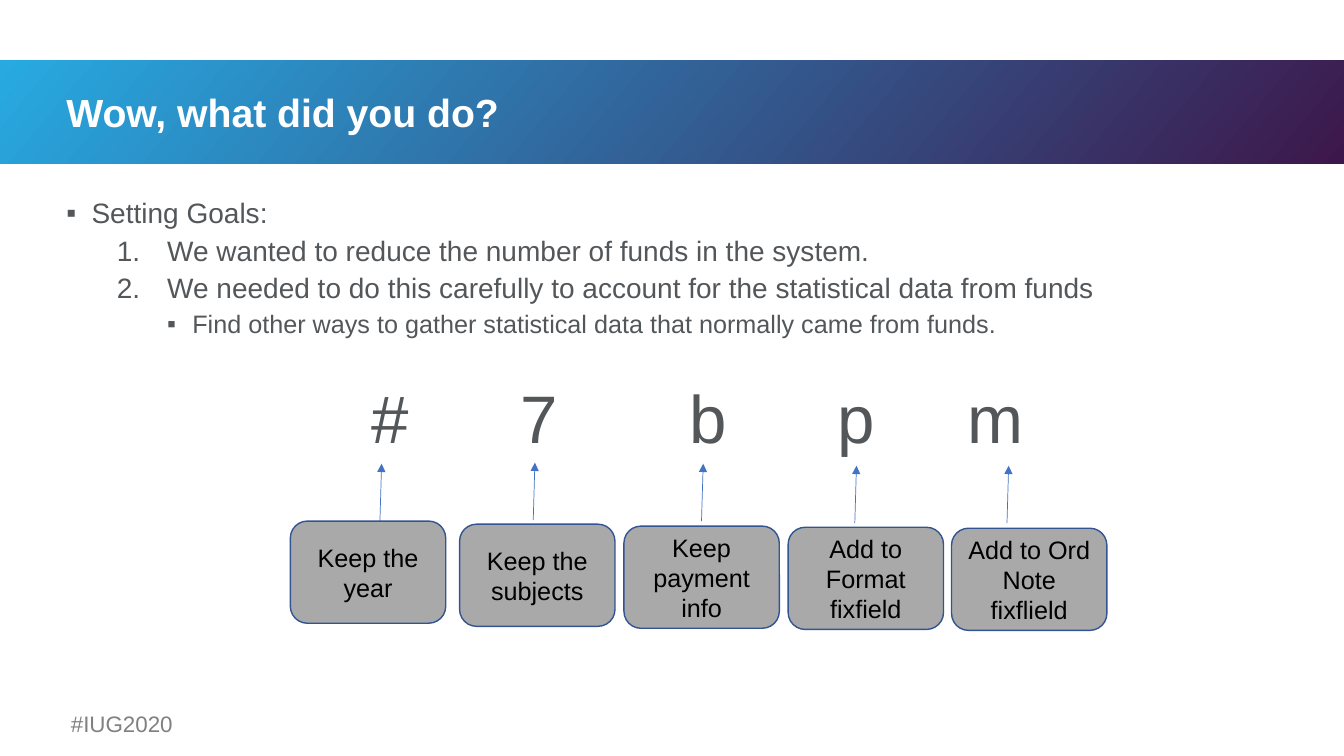
from lxml import etree
from pptx import Presentation
from pptx.dml.color import RGBColor
from pptx.enum.shapes import MSO_CONNECTOR, MSO_SHAPE
from pptx.enum.text import MSO_ANCHOR, PP_ALIGN
from pptx.oxml.ns import qn
from pptx.util import Pt

STRAIGHT = MSO_CONNECTOR.STRAIGHT
RECTANGLE, ROUNDED = MSO_SHAPE.RECTANGLE, MSO_SHAPE.ROUNDED_RECTANGLE
TOP, MIDDLE = MSO_ANCHOR.TOP, MSO_ANCHOR.MIDDLE
LEFT, CENTER = PP_ALIGN.LEFT, PP_ALIGN.CENTER

TITLE = "Wow, what did you do?"
HASHTAG = "#IUG2020"
SQUARE, NUMBER = ("buChar", "char", "▪"), ("buAutoNum", "type", "arabicPeriod")
GOALS = [
    ("Setting Goals:", 0, 18, 18, 20, SQUARE),
    ("We wanted to reduce the number of funds in the system.", 1, 72, 36, 20, NUMBER),
    ("We needed to do this carefully to account for the statistical data from funds",
     1, 72, 36, 20, NUMBER),
    ("Find other ways to gather statistical data that normally came from funds.",
     2, 90, 18, 18, SQUARE),
]
CODES = [
    ("#", 278.6, "Keep the year", 207.4, 372.2, 271.4, 372.2),
    ("7", 385, "Keep the subjects", 328.3, 374.4, 380.9, 371.5),
    ("b", 505.7, "Keep payment info", 445.7, 375.8, 501.1, 372.2),
    ("p", 611.4, "Add to Format fixfield", 563, 376.6, 610.6, 373.7),
    ("m", 711.4, "Add to Ord Note fixflield", 679.7, 377.3, 719.3, 373.7),
]
CARD_W, CARD_H = 111, 73
LETTER_W, LETTER_TOP, LETTER_H = 72, 268.7, 56
ARROW_RISE, ARROW_LEAN = 41, 1.2
SLATE = "53575A"


def color(value):
    return RGBColor.from_string(value)


def write(paragraph, text, size, ink, bold=False, align=LEFT, spacing=1.0, before=0):
    paragraph.alignment = align
    paragraph.line_spacing = spacing
    paragraph.space_before = Pt(before)
    run = paragraph.add_run()
    run.text = text
    run.font.name = "Arial"
    run.font.size = Pt(size)
    run.font.bold = bold
    run.font.color.rgb = color(ink)


def add_frame(left, top, width, height, anchor=TOP):
    box = slide.shapes.add_textbox(Pt(left), Pt(top), Pt(width), Pt(height))
    frame = box.text_frame
    frame.word_wrap = True
    frame.vertical_anchor = anchor
    return frame


def add_bullet(paragraph, level, margin, hanging, bullet):
    tag, key, value = bullet
    paragraph.level = level
    properties = paragraph._p.get_or_add_pPr()
    properties.set("marL", str(Pt(margin)))
    properties.set("indent", str(-Pt(hanging)))
    etree.SubElement(properties, qn("a:buFont")).set("typeface", "Arial")
    etree.SubElement(properties, qn("a:" + tag)).set(key, value)


def add_arrow(x, bottom):
    arrow = slide.shapes.add_connector(
        STRAIGHT, Pt(x), Pt(bottom), Pt(x + ARROW_LEAN), Pt(bottom - ARROW_RISE))
    arrow.line.color.rgb = color("4472C4")
    arrow.line.width = Pt(0.5)
    etree.SubElement(arrow.line._get_or_add_ln(), qn("a:tailEnd")).set("type", "triangle")
    etree.SubElement(arrow._element.spPr, qn("a:effectLst"))


def add_card(text, left, top):
    card = slide.shapes.add_shape(ROUNDED, Pt(left), Pt(top), Pt(CARD_W), Pt(CARD_H))
    card.shadow.inherit = False
    card.fill.solid()
    card.fill.fore_color.rgb = color("A9A9A9")
    card.line.color.rgb = color("325491")
    card.line.width = Pt(1)
    card.text_frame.word_wrap = True
    card.text_frame.vertical_anchor = MIDDLE
    write(card.text_frame.paragraphs[0], text, 18, "000000", align=CENTER)


deck = Presentation()
deck.slide_width, deck.slide_height = Pt(960), Pt(540)
slide = deck.slides.add_slide(deck.slide_layouts[6])

hashtag = add_frame(17, 504, 140, 26.6)
write(hashtag.paragraphs[0], HASHTAG, 16, "808080", align=CENTER)

banner = slide.shapes.add_shape(RECTANGLE, 0, Pt(43), Pt(960), Pt(74))
banner.shadow.inherit = False
banner.line.fill.background()
banner.fill.gradient()
banner.fill.gradient_angle = 320
for stop, shade in zip(banner.fill.gradient_stops, ("27AAE1", "3D174B")):
    stop.color.rgb = color(shade)

title = add_frame(40.3, 53.3, 872.6, 57.6, MIDDLE)
write(title.paragraphs[0], TITLE, 28, "FFFFFF", bold=True, spacing=0.9)

goals = add_frame(40.3, 139, 872.6, 115)
for index, (text, level, margin, hanging, size, bullet) in enumerate(GOALS):
    goal = goals.add_paragraph() if index else goals.paragraphs[0]
    add_bullet(goal, level, margin, hanging, bullet)
    write(goal, text, size, SLATE, spacing=0.9, before=5 if index else 0)

for letter, center, action, card_left, card_top, arrow_x, arrow_bottom in CODES:
    code = add_frame(center - LETTER_W / 2, LETTER_TOP, LETTER_W, LETTER_H)
    code.margin_top = code.margin_bottom = 0
    write(code.paragraphs[0], letter, 48, SLATE, align=CENTER)
    add_arrow(arrow_x, arrow_bottom)
    add_card(action, card_left, card_top)

deck.save("out.pptx")
